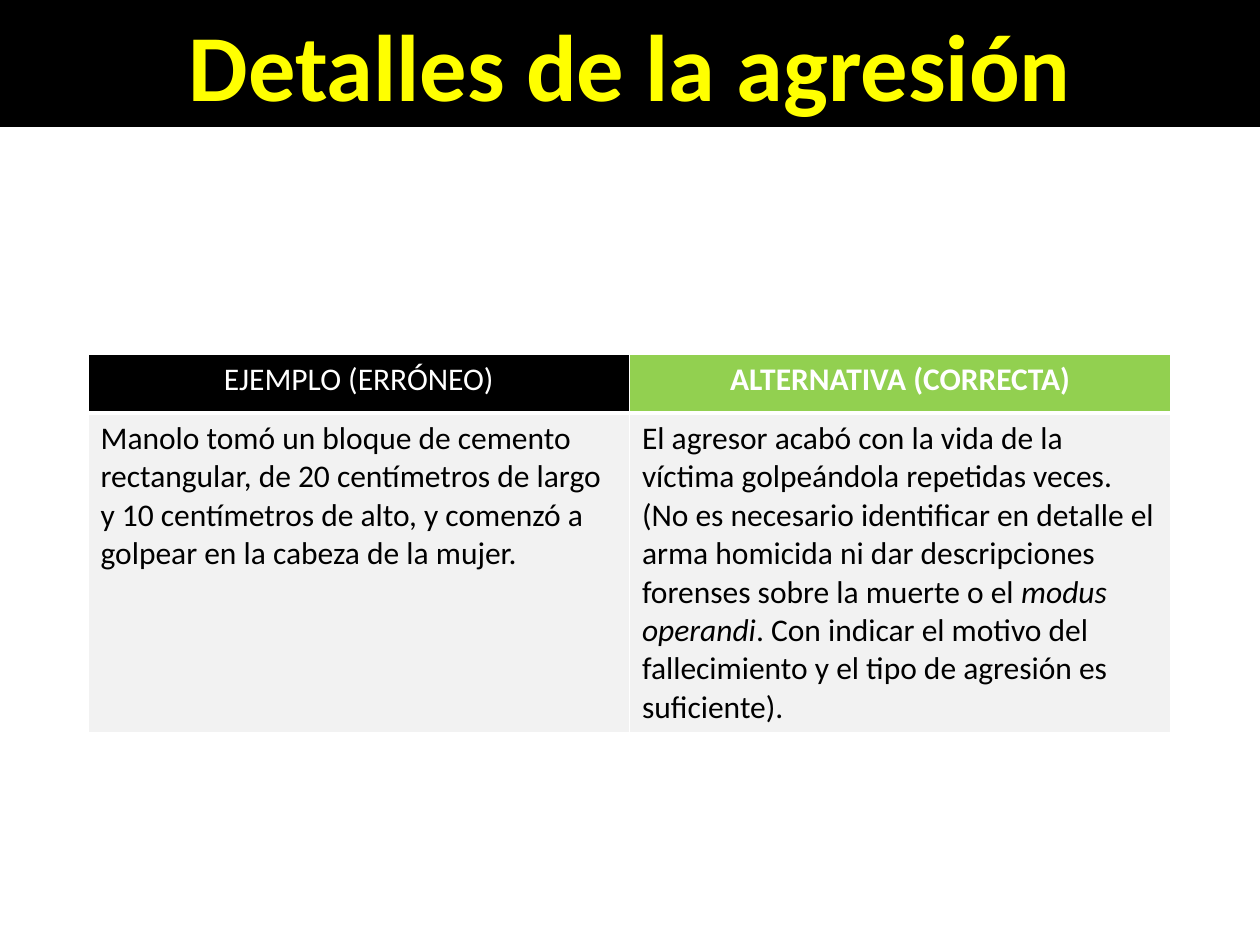
from lxml import etree
from pptx import Presentation
from pptx.dml.color import RGBColor
from pptx.enum.text import MSO_ANCHOR, PP_ALIGN
from pptx.oxml.ns import qn
from pptx.util import Pt

PX = 914400 // 126
CENTER, LEFT = PP_ALIGN.CENTER, PP_ALIGN.LEFT
MIDDLE = MSO_ANCHOR.MIDDLE
FONT = "Calibri"
HUES = {
    "black": "000000",
    "white": "FFFFFF",
    "yellow": "FFFF00",
    "green": "92D050",
    "gray": "F2F2F2",
}
HEADS = [
    ("EJEMPLO (ERRÓNEO)", "black", False),
    ("ALTERNATIVA (CORRECTA)", "green", True),
]
WRONG = [[
    "Manolo tomó un bloque de cemento rectangular, de 20 centímetros de largo "
    "y 10 centímetros de alto, y comenzó a golpear en la cabeza de la mujer."
]]
RIGHT = [
    ["El agresor acabó con la vida de la víctima golpeándola repetidas veces."],
    [
        "(No es necesario identificar en detalle el arma homicida ni dar "
        "descripciones forenses sobre la muerte o el ",
        "modus operandi",
        ". Con indicar el motivo del fallecimiento y el tipo de agresión "
        "es suficiente).",
    ],
]


def paint(shape, hue):
    shape.fill.solid()
    shape.fill.fore_color.rgb = RGBColor.from_string(HUES[hue])


def style(run, size, hue, bold=False, italic=False):
    font = run.font
    font.name, font.size = FONT, Pt(size)
    font.bold, font.italic = bold, italic
    font.color.rgb = RGBColor.from_string(HUES[hue])


def edge(cell, base):
    props = cell._tc.get_or_add_tcPr()
    for spot, side in enumerate("LRTB"):
        width = base if side == "B" else 1
        line = etree.Element(qn(f"a:ln{side}"), w=str(Pt(width)))
        fill = etree.SubElement(line, qn("a:solidFill"))
        etree.SubElement(fill, qn("a:srgbClr"), val=HUES["white"])
        props.insert(spot, line)


def add_title(slide, x, y, w, h):
    title = slide.shapes.title
    title.left, title.top = x * PX, y * PX
    title.width, title.height = w * PX, h * PX
    paint(title, "black")
    frame = title.text_frame
    frame.text = "Detalles de la agresión"
    frame.vertical_anchor = MIDDLE
    para = frame.paragraphs[0]
    para.alignment = CENTER
    style(para.runs[0], 54, "yellow", bold=True)


def fill_head(cell, text, hue, bold):
    paint(cell, hue)
    edge(cell, 3)
    cell.text_frame.text = text
    para = cell.text_frame.paragraphs[0]
    para.alignment = CENTER
    style(para.runs[0], 18, "white", bold)


def fill_body(cell, paras):
    paint(cell, "gray")
    edge(cell, 1)
    frame = cell.text_frame
    for row, parts in enumerate(paras):
        para = frame.paragraphs[0] if row == 0 else frame.add_paragraph()
        para.alignment = LEFT
        for spot, part in enumerate(parts):
            run = para.add_run()
            run.text = part
            style(run, 18, "black", italic=spot == 1)


def add_grid(slide, x, y, w, h):
    head = 59
    box = slide.shapes.add_table(2, 2, x * PX, y * PX, w * PX, h * PX)
    table = box.table
    table.rows[0].height = head * PX
    table.rows[1].height = (h - head) * PX
    for col, paras in enumerate([WRONG, RIGHT]):
        table.columns[col].width = w * PX // 2
        fill_head(table.cell(0, col), *HEADS[col])
        fill_body(table.cell(1, col), paras)


def main():
    deck = Presentation()
    deck.slide_width, deck.slide_height = 1260 * PX, 945 * PX
    slide = deck.slides.add_slide(deck.slide_layouts[5])
    add_title(slide, 0, 0, 1260, 127)
    add_grid(slide, 88, 354, 1083, 374)
    deck.save("out.pptx")


if __name__ == "__main__":
    main()
